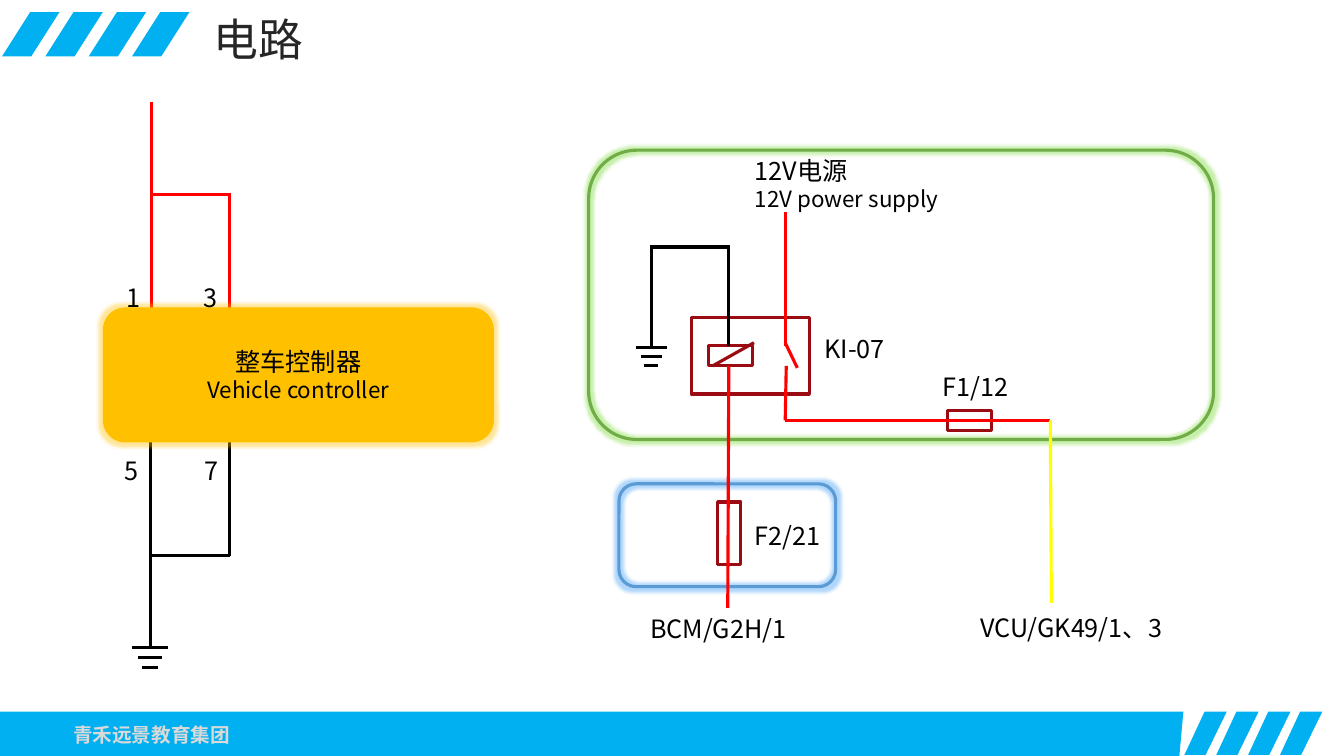
from dataclasses import dataclass

from lxml.etree import SubElement
from pptx import Presentation
from pptx.dml.color import RGBColor
from pptx.enum.shapes import MSO_CONNECTOR as Connector, MSO_SHAPE as Preset
from pptx.enum.text import MSO_ANCHOR as Anchor, MSO_AUTO_SIZE as AutoSize, PP_ALIGN as Align
from pptx.oxml.ns import qn
from pptx.util import Emu, Inches, Pt

FONT = "Noto Sans CJK SC"
CELL = Inches(0.1)  # the slide is a grid of 133.3 columns by 75 rows
BLUE, RED, MAROON, BLACK, YELLOW = "00B0F0", "FF0000", "9B0C12", "000000", "FFFF00"


@dataclass
class Wire:
    color: str
    start: tuple[float, float]
    end: tuple[float, float]


@dataclass
class Ground:
    center: float
    top: float
    gap: float
    widths: tuple[float, ...]


@dataclass
class Box:
    area: tuple[float, float, float, float]
    preset: Preset = Preset.RECTANGLE
    line: str | None = MAROON
    fill: str | None = None
    glow: str | None = None


@dataclass
class Label:
    area: tuple[float, float, float, float]
    lines: tuple[tuple[str, int], ...]


@dataclass
class Stripes:
    left: float
    top: float
    step: float
    outline: tuple[tuple[float, float], ...]


def grid(cells: float) -> Emu:
    return Emu(round(cells * CELL))


def rgb(color: str) -> RGBColor:
    return RGBColor.from_string(color)


def write(frame, lines, color: str = BLACK, align=Align.LEFT, anchor=Anchor.TOP, bold=False) -> None:
    layout = {"word_wrap": True, "auto_size": AutoSize.NONE, "vertical_anchor": anchor}
    for name, value in layout.items():
        setattr(frame, name, value)
    for index, (text, size) in enumerate(lines):
        para = frame.add_paragraph() if index else frame.paragraphs[0]
        para.alignment = align
        span = para.add_run()
        span.text = text
        for name, value in {"name": FONT, "size": Pt(size), "bold": bold}.items():
            setattr(span.font, name, value)
        span.font.color.rgb = rgb(color)
        SubElement(span.font._element, qn("a:ea"), typeface=FONT)


def draw_wire(page, wire: Wire) -> None:
    ends = [grid(cells) for cells in (*wire.start, *wire.end)]
    connector = page.shapes.add_connector(Connector.STRAIGHT, *ends)
    connector.line.color.rgb = rgb(wire.color)
    connector.line.width = Pt(2.25)
    SubElement(connector._element.spPr, qn("a:effectLst"))


def draw_ground(page, ground: Ground) -> None:
    for row, width in enumerate(ground.widths):
        level = ground.top + row * ground.gap
        left = ground.center - width / 2
        draw_wire(page, Wire(BLACK, (left, level), (left + width, level)))


def draw_box(page, box: Box):
    shape = page.shapes.add_shape(box.preset, *map(grid, box.area))
    shape.shadow.inherit = False
    if box.fill:
        shape.fill.solid()
        shape.fill.fore_color.rgb = rgb(box.fill)
    else:
        shape.fill.background()
    if box.line:
        shape.line.color.rgb = rgb(box.line)
        shape.line.width = Pt(2.25)
    else:
        shape.line.fill.background()
    if box.glow:
        effects = shape._element.spPr.find(qn("a:effectLst"))
        glow = SubElement(effects, qn("a:glow"), rad=str(Pt(5)))
        tint = SubElement(glow, qn("a:srgbClr"), val=box.glow)
        SubElement(tint, qn("a:alpha"), val="40000")
    return shape


def draw_label(page, label: Label, **formats) -> None:
    write(page.shapes.add_textbox(*map(grid, label.area)).text_frame, label.lines, **formats)


def draw_outline(page, points) -> None:
    corners = [(grid(x), grid(y)) for x, y in points]
    builder = page.shapes.build_freeform(*corners[0], scale=1.0)
    builder.add_line_segments(corners[1:], close=True)
    shape = builder.convert_to_shape()
    shape.shadow.inherit = False
    shape.fill.solid()
    shape.fill.fore_color.rgb = rgb(BLUE)
    shape.line.fill.background()


def draw_stripes(page, stripes: Stripes) -> None:
    for index in range(4):
        left = stripes.left + index * stripes.step
        draw_outline(page, [(left + x, stripes.top + y) for x, y in stripes.outline])


HEADER = Stripes(0.2, 1.2, 4.3, ((2.8, 0), (0, 4.4), (2.9, 4.4), (5.7, 0)))
FOOTER = Stripes(117.5, 70.6, 3.16, ((2.1, 4.3), (4.2, 0), (2, 0), (0, 4.3)))
FOOTER_BAR = ((0, 70.6), (117.4, 70.6), (117, 75), (0, 75))

BOXES = [
    Box((58.4, 14.9, 62, 28.7), Preset.ROUNDED_RECTANGLE, "70AD47", glow="74D82E"),
    Box((61.4, 48, 21.5, 10.2), Preset.ROUNDED_RECTANGLE, "5B9BD5", glow="3A9BF8"),
    Box((68.6, 31.5, 11.7, 7.6)),  # relay
    Box((70.3, 34.3, 4.4, 2)),  # coil
    Box((94, 40.7, 4.4, 2)),  # fuse F1/12
    Box((71.2, 49.8, 2.3, 6.2)),  # fuse F2/21
]
CONTROLLER = Box((10.2, 30.5, 38.8, 13.4), Preset.ROUNDED_RECTANGLE, None, "FFC000", "FFC000")

WIRES = [
    # Controller supply and earth
    Wire(RED, (15, 10.1), (15, 31.3)),
    Wire(RED, (14.9, 19.3), (22.9, 19.3)),
    Wire(RED, (22.8, 19.1), (22.8, 31.3)),
    Wire(BLACK, (14.9, 43), (14.9, 64.2)),
    Wire(BLACK, (22.8, 43), (22.8, 55.2)),
    Wire(BLACK, (14.8, 55.1), (22.8, 55.1)),
    # Relay coil
    Wire(MAROON, (70.7, 36.3), (74.8, 34)),
    Wire(BLACK, (72.3, 34.3), (72.3, 24.3)),
    Wire(BLACK, (64.6, 24.5), (72.3, 24.5)),
    Wire(BLACK, (64.6, 34.3), (64.6, 24.3)),
    Wire(RED, (72.2, 60.3), (72.3, 36.3)),
    # Relay contact and output
    Wire(RED, (77.9, 34.3), (77.9, 21)),
    Wire(RED, (77.9, 41.7), (78, 36.3)),
    Wire(RED, (77.9, 34), (79.1, 36.5)),
    Wire(RED, (77.9, 41.7), (104.2, 41.7)),
    Wire(YELLOW, (104.3, 59.8), (104.2, 41.7)),
]
GROUNDS = [Ground(14.9, 64.2, 1, (3.6, 2.4, 1.6)), Ground(64.6, 34.5, 0.9, (3.1, 2.1, 1.4))]

LABELS = [
    Label((11.6, 27.5, 3.6, 4), (("1", 18),)),
    Label((19.2, 27.5, 3.6, 4), (("3", 18),)),
    Label((11.4, 44.7, 3.6, 4), (("5", 18),)),
    Label((19.3, 44.7, 3.6, 4), (("7", 18),)),
    Label((73.9, 14.9, 22.4, 6.7), (("12V电源", 18), ("12V power supply", 16))),
    Label((96.3, 60.3, 20, 4), (("VCU/GK49/1、3", 18),)),
    Label((63.5, 60.4, 16.8, 4), (("BCM/G2H/1", 18),)),
    Label((92.5, 36.3, 10, 4), (("F1/12", 18),)),
    Label((80.8, 32.6, 8.8, 4), (("KI-07", 18),)),
    Label((73.9, 51.1, 8.9, 4), (("F2/21", 18),)),
]


def main() -> None:
    deck = Presentation()
    deck.slide_width, deck.slide_height = grid(133.33), grid(75)
    page = deck.slides.add_slide(deck.slide_layouts[5])

    # Header and footer
    draw_stripes(page, HEADER)
    draw_stripes(page, FOOTER)
    draw_outline(page, FOOTER_BAR)
    owner = Label((5.6, 71.1, 18.9, 3.6), (("青禾远景教育集团", 14),))
    draw_label(page, owner, color="D9D9D9", align=Align.CENTER, anchor=Anchor.MIDDLE, bold=True)
    title = page.shapes.title
    title_area = {"left": 20.2, "top": 0.7, "width": 63.2, "height": 6.4}
    for name, cells in title_area.items():
        setattr(title, name, grid(cells))
    write(title.text_frame, [("电路", 32)], color="262626")

    # Circuit
    for box in BOXES:
        draw_box(page, box)
    for wire in WIRES:
        draw_wire(page, wire)
    for ground in GROUNDS:
        draw_ground(page, ground)
    controller = draw_box(page, CONTROLLER)
    names = [("整车控制器", 18), ("Vehicle controller", 16)]
    write(controller.text_frame, names, align=Align.CENTER, anchor=Anchor.MIDDLE)
    for label in LABELS:
        draw_label(page, label)

    deck.save("out.pptx")


if __name__ == "__main__":
    main()
